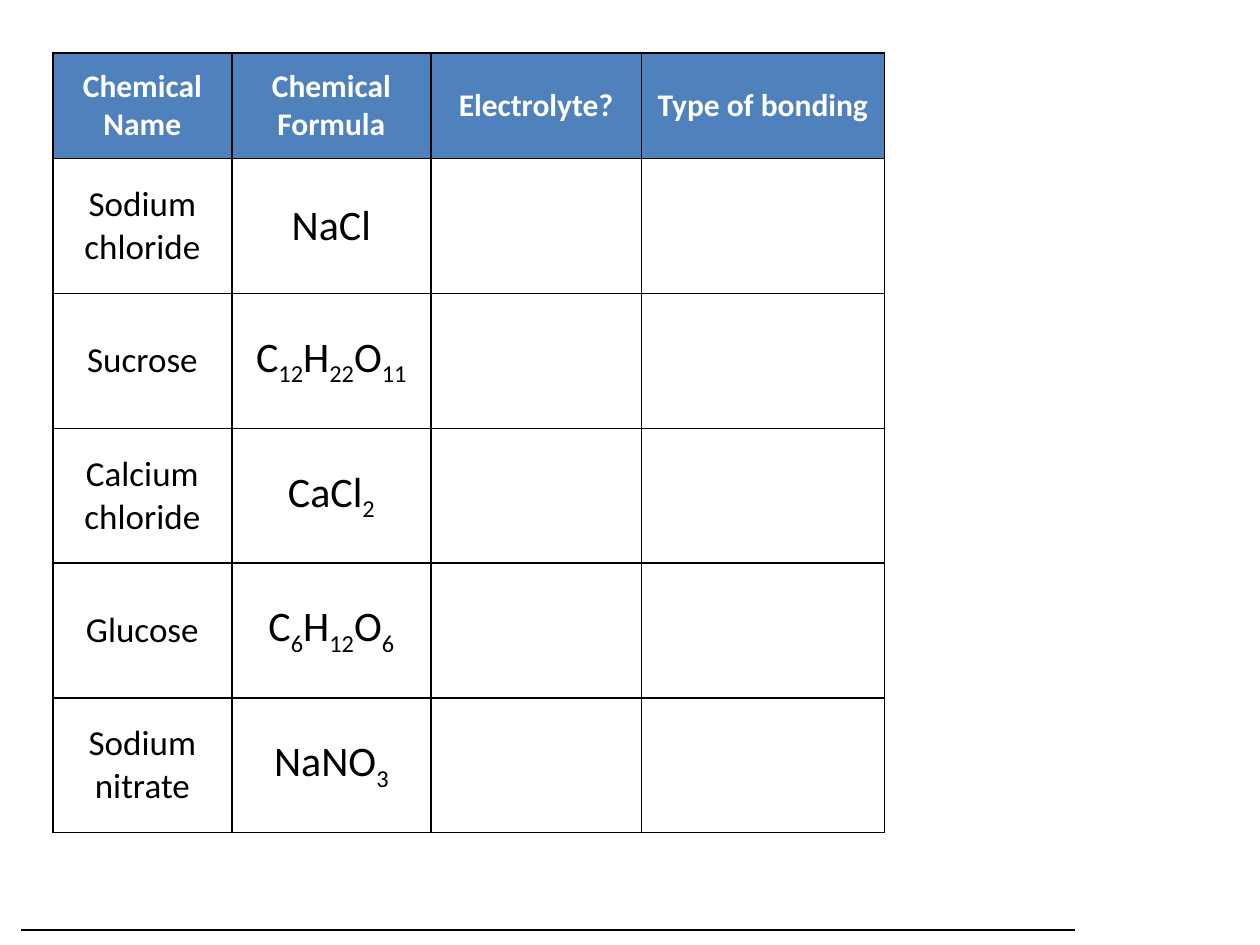
from dataclasses import dataclass
from itertools import groupby

from lxml import etree
from pptx import Presentation
from pptx import util as u
from pptx.dml.color import RGBColor
from pptx.enum import shapes, text
from pptx.oxml import ns

COLORS = {"head": "4F81BD", "body": "FFFFFF", "ink": "000000", "light": "FFFFFF"}
HEADS = ["Chemical Name", "Chemical Formula", "Electrolyte?", "Type of bonding"]
WIDTHS = [1.42, 1.58, 1.67, 1.93]
HEIGHTS = [0.84] + [1.07] * 5


@dataclass
class Salt:
    name: str
    formula: str


@dataclass
class Style:
    size: int
    ink: str
    fill: str
    bold: bool = False


SALTS = [
    Salt("Sodium chloride", "NaCl"),
    Salt("Sucrose", "C12H22O11"),
    Salt("Calcium chloride", "CaCl2"),
    Salt("Glucose", "C6H12O6"),
    Salt("Sodium nitrate", "NaNO3"),
]
HEAD = Style(18, "light", "head", True)
NAME = Style(20, "ink", "body")
FORMULA = Style(24, "ink", "body")


def color(key: str) -> RGBColor:
    return RGBColor.from_string(COLORS[key])


def border(cell) -> None:
    props = cell._tc.get_or_add_tcPr()
    for side in ("lnL", "lnR", "lnT", "lnB"):
        line = etree.SubElement(props, ns.qn(f"a:{side}"), w=str(u.Pt(1)))
        fill = etree.SubElement(line, ns.qn("a:solidFill"))
        etree.SubElement(fill, ns.qn("a:srgbClr"), val=COLORS["ink"])


def write(cell, words: str, style: Style) -> None:
    border(cell)
    cell.fill.solid()
    cell.fill.fore_color.rgb = color(style.fill)
    cell.vertical_anchor = text.MSO_ANCHOR.MIDDLE
    para = cell.text_frame.paragraphs[0]
    para.alignment = text.PP_ALIGN.CENTER
    font = para.font
    font.name, font.size, font.bold = "Calibri", u.Pt(style.size), style.bold
    font.color.rgb = color(style.ink)
    for digits, chars in groupby(words, str.isdigit):
        run = para.add_run()
        run.text = "".join(chars)
        if digits:
            run._r.get_or_add_rPr().set("baseline", "-25000")


def add_grid(slide) -> None:
    grid = slide.shapes.add_table(
        len(HEIGHTS), len(WIDTHS), u.Inches(0.42), u.Inches(0.42),
        u.Inches(sum(WIDTHS)), u.Inches(sum(HEIGHTS)),
    ).table
    grid.horz_banding = False
    for col, width in zip(grid.columns, WIDTHS):
        col.width = u.Inches(width)
    for row, height in zip(grid.rows, HEIGHTS):
        row.height = u.Inches(height)
    for col, head in enumerate(HEADS):
        write(grid.cell(0, col), head, HEAD)
    for row, salt in enumerate(SALTS, 1):
        write(grid.cell(row, 0), salt.name, NAME)
        write(grid.cell(row, 1), salt.formula, FORMULA)
        for col in (2, 3):
            write(grid.cell(row, col), "", NAME)


def add_rule(slide) -> None:
    rule = slide.shapes.add_connector(
        shapes.MSO_CONNECTOR.STRAIGHT,
        u.Inches(0.17), u.Inches(7.38), u.Inches(8.53), u.Inches(7.38),
    )
    rule.line.color.rgb = color("ink")
    rule.line.width = u.Pt(0.75)
    etree.SubElement(rule._element.spPr, ns.qn("a:effectLst"))


def main() -> None:
    """Build the worksheet slide on electrolytes and bonding."""
    deck = Presentation()
    deck.slide_width, deck.slide_height = u.Inches(10), u.Inches(7.5)
    slide = deck.slides.add_slide(deck.slide_layouts[6])
    add_rule(slide)
    add_grid(slide)
    deck.save("out.pptx")


if __name__ == "__main__":
    main()
